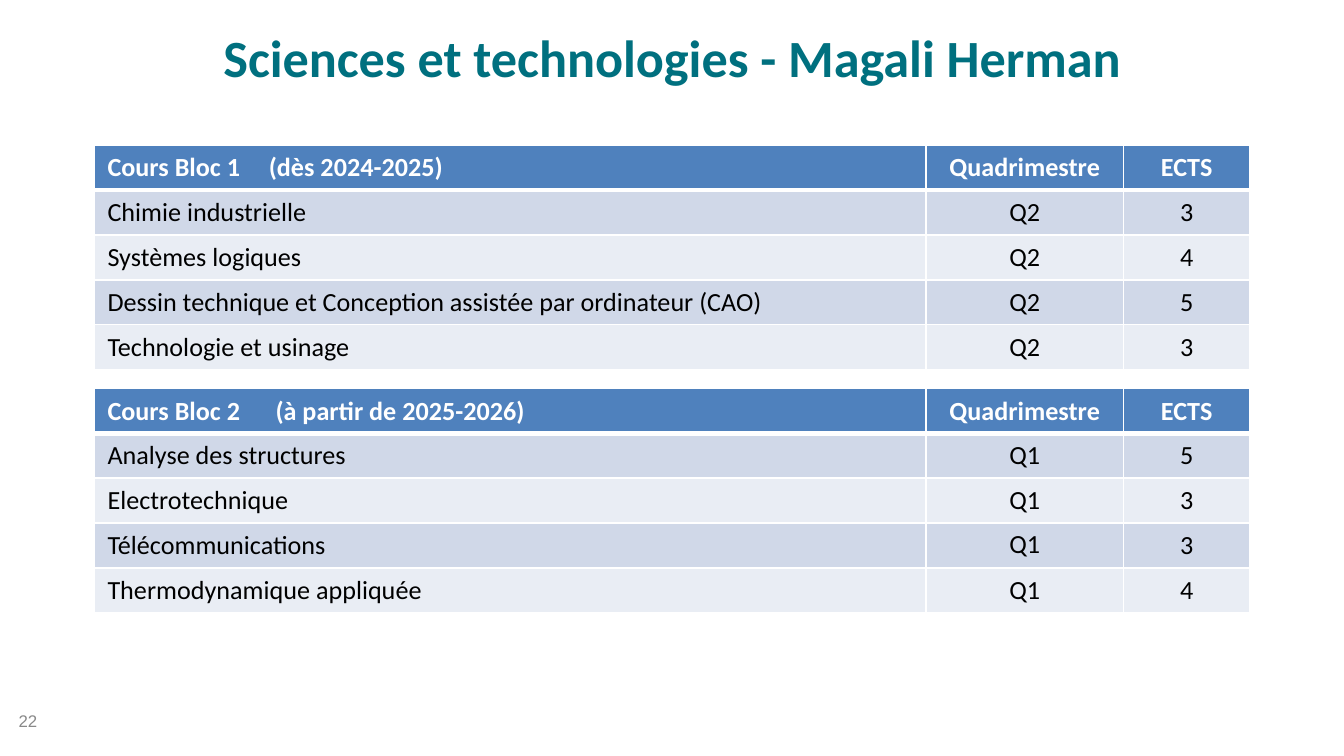
from dataclasses import dataclass

from lxml import etree
from pptx import Presentation
from pptx.dml.color import RGBColor
from pptx.enum.text import MSO_ANCHOR, PP_ALIGN
from pptx.oxml.ns import qn
from pptx.util import Inches, Pt

LEFT, CENTER = PP_ALIGN.LEFT, PP_ALIGN.CENTER
TOP, MIDDLE = MSO_ANCHOR.TOP, MSO_ANCHOR.MIDDLE


@dataclass(frozen=True)
class Theme:
    font: str = "Calibri"
    number_font: str = "Arial"
    teal: str = "00707F"
    grey: str = "898989"
    white: str = "FFFFFF"
    black: str = "000000"
    header: str = "4F81BD"
    bands: tuple = ("D0D8E8", "E9EDF4")
    title_size: int = 28
    table_size: int = 14
    number_size: int = 9
    thin: int = 1
    thick: int = 3


THEME = Theme()
COLUMN_WIDTHS = (6.19, 1.47, 0.94)
# Least heights: the rows grow to share the height of the table
ROW_HEIGHTS = (0.24, 0.24, 0.28, 0.28, 0.28)

# Each block: name, start, tab position of the start, courses
BLOCKS = [
    ("Cours Bloc 1", "(dès 2024-2025)", 1.2, [
        ("Chimie industrielle", "Q2", "3"),
        ("Systèmes logiques", "Q2", "4"),
        ("Dessin technique et Conception assistée par ordinateur (CAO)", "Q2", "5"),
        ("Technologie et usinage", "Q2", "3"),
    ]),
    ("Cours Bloc 2", "(à partir de 2025-2026)", 1.25, [
        ("Analyse des structures", "Q1", "5"),
        ("Electrotechnique", "Q1", "3"),
        ("Télécommunications", "Q1", "3"),
        ("Thermodynamique appliquée", "Q1", "4"),
    ]),
]


def write(paragraph, text, size, color, font=THEME.font, bold=False, align=LEFT):
    paragraph.alignment = align
    run = paragraph.add_run()
    run.text = text
    for name, value in {"name": font, "size": Pt(size), "bold": bold}.items():
        setattr(run.font, name, value)
    run.font.color.rgb = RGBColor.from_string(color)


def add_tab(paragraph, position):
    tabs = etree.SubElement(paragraph._p.get_or_add_pPr(), qn("a:tabLst"))
    etree.SubElement(tabs, qn("a:tab"), pos=str(Inches(position)), algn="l")


def set_borders(cell, widths):
    properties = cell._tc.get_or_add_tcPr()
    for side, width in widths.items():
        line = etree.SubElement(properties, qn(f"a:ln{side}"), w=str(Pt(width)))
        fill = etree.SubElement(line, qn("a:solidFill"))
        etree.SubElement(fill, qn("a:srgbClr"), val=THEME.white)


def add_title(slide, box, text):
    title = slide.shapes.title
    for name, value in zip(("left", "top", "width", "height"), box):
        setattr(title, name, Inches(value))
    title.text_frame.vertical_anchor = TOP
    write(title.text_frame.paragraphs[0], text, THEME.title_size, THEME.teal,
          bold=True, align=CENTER)


def add_course_table(slide, box, block):
    name, start, tab, courses = block
    rows = [(f"{name}\t{start}", "Quadrimestre", "ECTS"), *courses]
    frame = slide.shapes.add_table(len(rows), len(COLUMN_WIDTHS), *map(Inches, box))
    table = frame.table
    for column, width in zip(table.columns, COLUMN_WIDTHS):
        column.width = Inches(width)
    for row, height in zip(table.rows, ROW_HEIGHTS):
        row.height = Inches(height)
    frame.height = Inches(box[3])

    for r, row in enumerate(rows):
        is_header = r == 0
        fill = THEME.header if is_header else THEME.bands[(r - 1) % 2]
        color = THEME.white if is_header else THEME.black
        # The rule under the header is thicker than the others
        borders = {"L": THEME.thin, "R": THEME.thin,
                   "T": THEME.thick if r == 1 else THEME.thin,
                   "B": THEME.thick if is_header else THEME.thin}
        for c, text in enumerate(row):
            cell = table.cell(r, c)
            set_borders(cell, borders)
            cell.fill.solid()
            cell.fill.fore_color.rgb = RGBColor.from_string(fill)
            paragraph = cell.text_frame.paragraphs[0]
            if "\t" in text:
                add_tab(paragraph, tab)
            write(paragraph, text, THEME.table_size, color,
                  bold=is_header, align=CENTER if c else LEFT)
    return table


def add_page_number(slide, box, number):
    frame = slide.shapes.add_textbox(*map(Inches, box)).text_frame
    frame.word_wrap = True
    frame.vertical_anchor = MIDDLE
    write(frame.paragraphs[0], number, THEME.number_size, THEME.grey,
          font=THEME.number_font)


def main():
    deck = Presentation()
    # A 16:9 slide
    deck.slide_width = Inches(10)
    deck.slide_height = deck.slide_width * 9 // 16
    slide = deck.slides.add_slide(deck.slide_layouts[5])

    add_page_number(slide, (0.04, 5.21, 2.33, 0.3), "22")
    add_title(slide, (0.5, 0.14, 9, 0.62), "Sciences et technologies - Magali Herman")
    tables = [add_course_table(slide, (0.7, top, 8.6, 1.67), block)
              for top, block in zip((1.08, 2.89), BLOCKS)]

    # The term of Télécommunications sits slightly higher
    telecom_term = tables[1].cell(3, 1)
    telecom_term.margin_top = telecom_term.margin_bottom = Inches(0.04)

    deck.save("out.pptx")


if __name__ == "__main__":
    main()
